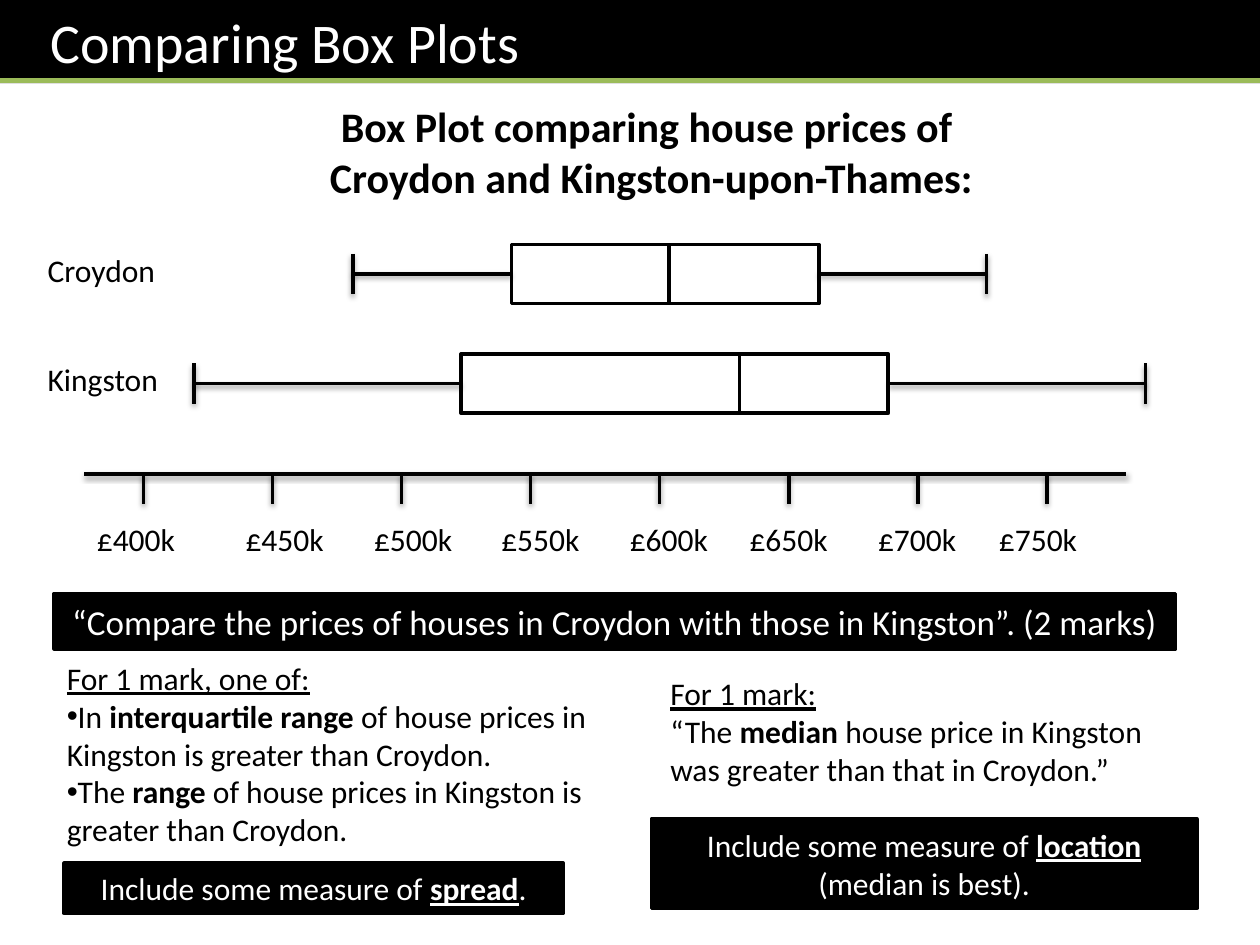
from dataclasses import dataclass

from lxml.etree import SubElement as Sub
from pptx import Presentation
from pptx.dml.color import RGBColor as RGB
from pptx.enum.shapes import MSO_CONNECTOR as LINK, MSO_SHAPE as SHAPE
from pptx.enum.text import MSO_ANCHOR as ANCHOR, MSO_AUTO_SIZE as FIT, PP_ALIGN as ALIGN
from pptx.oxml.ns import qn
from pptx.util import Inches, Pt


@dataclass(frozen=True)
class Theme:
    font: str = "Calibri"
    ink: RGB = RGB(0, 0, 0)
    paper: RGB = RGB(255, 255, 255)
    green: RGB = RGB(0x9B, 0xBB, 0x59)
    title: int = 32
    head: int = 24
    task: int = 20
    text: int = 18
    line: int = 2
    rule: int = 3


LOOK = Theme()
BOLD = {"bold": True}
UNDER = {"underline": True}


def place(item, box):
    for name, value in zip(("left", "top", "width", "height"), box):
        setattr(item, name, Inches(value))


def write(item, paras, size, color=LOOK.ink, align=ALIGN.LEFT, anchor=ANCHOR.TOP):
    """Fill item with paragraphs, each a list of (text, format) runs."""
    frame = item.text_frame
    for name, value in {"word_wrap": True, "auto_size": FIT.NONE,
                        "vertical_anchor": anchor}.items():
        setattr(frame, name, value)
    for i, runs in enumerate(paras):
        para = frame.paragraphs[0] if i == 0 else frame.add_paragraph()
        for name, value in {"alignment": align, "space_before": Pt(0)}.items():
            setattr(para, name, value)
        for text, style in runs:
            run = para.add_run()
            run.text = text
            run.font.color.rgb = color
            for name, value in {"name": LOOK.font, "size": Pt(size), **style}.items():
                setattr(run.font, name, value)
    return frame


def label(slide, box, paras, size=LOOK.text, align=ALIGN.LEFT):
    item = slide.shapes.add_textbox(*map(Inches, box))
    return write(item, paras, size, align=align)


def block(slide, box, fill):
    item = slide.shapes.add_shape(SHAPE.RECTANGLE, *map(Inches, box))
    item.shadow.inherit = False
    item.fill.solid()
    item.fill.fore_color.rgb = fill
    item.line.color.rgb = LOOK.ink
    item.line.width = Pt(LOOK.line)
    return item


def line(slide, start, end, color=LOOK.ink, width=LOOK.line, shade=True):
    item = slide.shapes.add_connector(LINK.STRAIGHT, *map(Inches, (*start, *end)))
    item.line.color.rgb = color
    item.line.width = Pt(width)
    effects = Sub(item._element.spPr, qn("a:effectLst"))
    if shade:
        cast = Sub(effects, qn("a:outerShdw"), blurRad=str(Pt(3.1)),
                   dist=str(Pt(1.6)), dir="5400000", rotWithShape="0")
        tint = Sub(cast, qn("a:srgbClr"), val=str(LOOK.ink))
        Sub(tint, qn("a:alpha"), val="38000")


def banner(slide, box, text):
    left, top, width, height = box
    title = slide.shapes.title
    place(title, box)
    title.fill.solid()
    title.fill.fore_color.rgb = LOOK.ink
    frame = write(title, [[(text, {})]], LOOK.title, LOOK.paper, anchor=ANCHOR.MIDDLE)
    frame.margin_left = Inches(0.4)
    rule = top + height - 0.02
    line(slide, (left, rule), (left + width, rule), LOOK.green, LOOK.rule, shade=False)


def scale(slide, box, names, stops):
    """Draw the axis, its even ticks and one row of tabbed labels."""
    left, top, width, _ = box
    line(slide, (left, top), (left + width, top))
    for i in range(len(names)):
        x = left + 0.47 + i * 1.024
        line(slide, (x, top), (x, top + 0.24))
    frame = label(slide, (left, top + 0.32, 9.09, 0.4), [[("\t".join(names), {})]])
    tabs = Sub(frame.paragraphs[0]._p.get_or_add_pPr(), qn("a:tabLst"))
    for stop in stops:
        Sub(tabs, qn("a:tab"), pos=str(Inches(stop)), algn="l")


def plot(slide, box, name, marks):
    """Draw a named box plot; marks are offsets of the five summary points."""
    left, top, width, height = box
    label(slide, (left, top, 1.22, 0.4), [[(name, {})]])
    low, first, mid, third, high = (left + mark for mark in marks)
    axis = top + height / 2
    for start, end in ((first, mid), (mid, third)):
        block(slide, (start, top, end - start, height), LOOK.paper)
    for tip, edge in ((low, first), (high, third)):
        line(slide, (tip, axis), (edge, axis))
        line(slide, (tip, axis - 0.16), (tip, axis + 0.16))


def answer(slide, slot, box, paras, bullets=False):
    item = slide.placeholders[slot]
    place(item, box)
    frame = write(item, paras, LOOK.text)
    for i, para in enumerate(frame.paragraphs):
        props = para._p.get_or_add_pPr()
        for name in ("marL", "indent"):
            props.set(name, "0")
        if bullets and i > 0:
            Sub(props, qn("a:buChar"), char="•")
        else:
            Sub(props, qn("a:buNone"))


def strip(slide, box, runs, size=LOOK.text):
    write(block(slide, box, LOOK.ink), [runs], size, LOOK.paper,
          ALIGN.CENTER, ANCHOR.MIDDLE)


def main():
    deck = Presentation()
    deck.slide_width, deck.slide_height = Inches(10), Inches(7.5)
    slide = deck.slides.add_slide(deck.slide_layouts[3])

    banner(slide, (0, 0, 10, 0.66), "Comparing Box Plots")
    label(slide, (0.17, 0.75, 10, 0.91),
          [[("Box Plot comparing house prices of ", BOLD)],
           [("Croydon and Kingston-upon-Thames:", BOLD)]], LOOK.head, ALIGN.CENTER)

    plots = {"Croydon": (2.52, 3.78, 5.03, 6.22, 7.55),
             "Kingston": (1.26, 3.38, 5.59, 6.77, 8.81)}
    for i, (name, marks) in enumerate(plots.items()):
        plot(slide, (0.28, 1.94 + i * 0.87, 8.81, 0.47), name, marks)
    scale(slide, (0.67, 3.76, 8.27, 0.72),
          [f"£{price}k" for price in range(400, 751, 50)],
          (1.18, 2.2, 3.21, 4.23, 5.18, 6.2, 7.16))

    strip(slide, (0.43, 4.71, 8.9, 0.44),
          [("“Compare the prices of houses in Croydon with those in Kingston”. (2 marks)", {})],
          LOOK.task)
    tail = " of house prices in Kingston is greater than Croydon."
    answer(slide, 1, (0.43, 5.18, 4.45, 1.62),
           [[("For 1 mark, one of:", UNDER)],
            [("In ", {}), ("interquartile range", BOLD), (tail, {})],
            [("The ", {}), ("range", BOLD), (tail, {})]], bullets=True)
    answer(slide, 2, (5.22, 5.3, 4.25, 1.01),
           [[("For 1 mark:", UNDER)],
            [("“The ", {}), ("median", BOLD),
             (" house price in Kingston was greater than that in Croydon.”", {})]])
    for box, word, end in (((0.51, 6.85, 3.96, 0.4), "spread", "."),
                           ((5.17, 6.5, 4.33, 0.71), "location", " (median is best).")):
        strip(slide, box, [("Include some measure of ", {}),
                           (word, {**BOLD, **UNDER}), (end, {})])
    deck.save("out.pptx")


if __name__ == "__main__":
    main()
